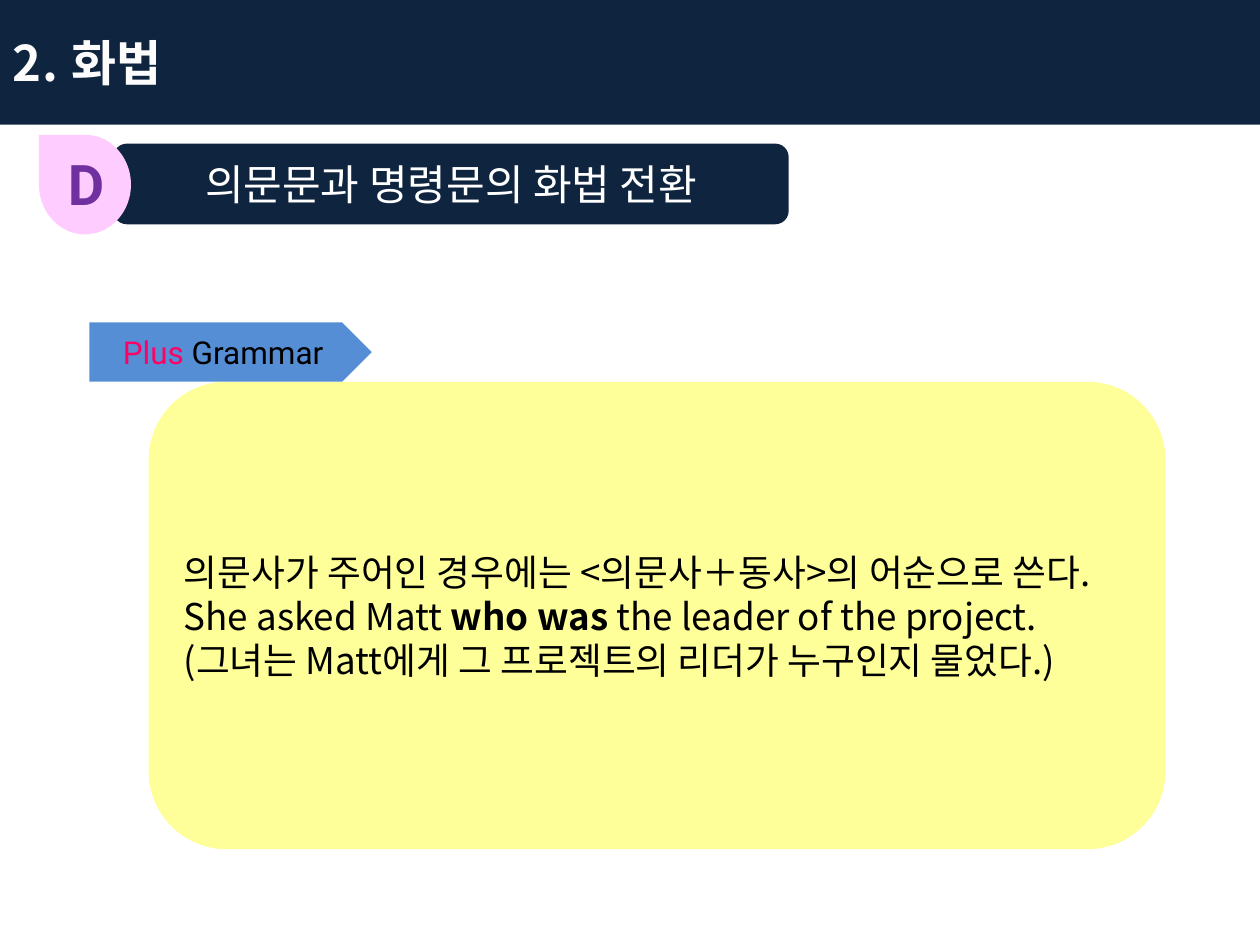
from lxml.etree import SubElement
from pptx import Presentation
from pptx.dml.color import RGBColor
from pptx.enum.shapes import MSO_SHAPE
from pptx.enum.text import MSO_ANCHOR, PP_ALIGN
from pptx.oxml.ns import qn
from pptx.util import Inches, Pt

NAVY = RGBColor(0x0F, 0x24, 0x3E)
PINK = RGBColor(0xFF, 0xCC, 0xFF)
PURPLE = RGBColor(0x70, 0x30, 0xA0)
YELLOW = RGBColor(0xFF, 0xFF, 0x99)
BLUE = RGBColor(0x55, 0x8E, 0xD5)
ROSE = RGBColor(0xFF, 0x00, 0x66)
OFF_WHITE = RGBColor(0xFC, 0xFC, 0xFD)
WHITE = RGBColor(0xFF, 0xFF, 0xFF)
BLACK = RGBColor(0, 0, 0)
KOREAN, LATIN = "Noto Sans CJK KR", "Roboto"

TITLE = [[("2. 화법", OFF_WHITE, True)]]
HEADING = [[("의문문과 명령문의 화법 전환", WHITE, False)]]
LETTER = [[("D", PURPLE, True)]]
LABEL = [[("Plus ", ROSE, False), ("Grammar", BLACK, False)]]
EXPLANATION = [
    [("의문사가 주어인 경우에는 <의문사＋동사>의 어순으로 쓴다.", BLACK, False)],
    [("She asked Matt ", BLACK, False), ("who was ", BLACK, True),
     ("the leader of the project.", BLACK, False)],
    [("(그녀는 Matt에게 그 프로젝트의 리더가 누구인지 물었다.)", BLACK, False)],
]


def write(shape, paragraphs, size, font, align=PP_ALIGN.LEFT, anchor=MSO_ANCHOR.MIDDLE):
    frame = shape.text_frame
    frame.word_wrap = True
    frame.vertical_anchor = anchor
    for index, spans in enumerate(paragraphs):
        para = frame.paragraphs[0] if index == 0 else frame.add_paragraph()
        para.alignment = align
        para.font.size = Pt(size)
        for text, color, bold in spans:
            span = para.add_run()
            span.text = text
            span.font.size = Pt(size)
            span.font.name = font
            span.font.bold = bold
            span.font.color.rgb = color
            SubElement(span.font._element, qn("a:ea"), typeface=font)


def add_block(page, preset, place, color):
    shape = page.shapes.add_shape(preset, *map(Inches, place))
    shape.shadow.inherit = False
    shape.fill.solid()
    shape.fill.fore_color.rgb = color
    shape.line.fill.background()
    return shape


def main():
    deck = Presentation()
    deck.slide_width, deck.slide_height = Inches(10), Inches(7.5)
    page = deck.slides.add_slide(deck.slide_layouts[5])

    title = page.shapes.title
    title.left, title.top = Inches(0), Inches(0)
    title.width, title.height = Inches(10), Inches(0.99)
    title.fill.solid()
    title.fill.fore_color.rgb = NAVY
    write(title, TITLE, 28, KOREAN)
    title.text_frame.paragraphs[0].runs[0].font._element.set("spc", "50")

    heading = add_block(page, MSO_SHAPE.FLOWCHART_ALTERNATE_PROCESS,
                        (0.9, 1.14, 5.36, 0.64), NAVY)
    write(heading, HEADING, 24, KOREAN, PP_ALIGN.CENTER)

    drop = add_block(page, MSO_SHAPE.TEAR, (0.28, 1.1, 0.79, 0.73), PINK)
    drop.rotation = 270
    letter = page.shapes.add_textbox(*map(Inches, (0.44, 1.14, 0.47, 0.64)))
    write(letter, LETTER, 32, LATIN, anchor=MSO_ANCHOR.TOP)

    panel = add_block(page, MSO_SHAPE.FLOWCHART_ALTERNATE_PROCESS,
                      (1.18, 3.03, 8.07, 3.71), YELLOW)
    write(panel, EXPLANATION, 21, KOREAN)
    panel.text_frame.margin_right = 0

    label = add_block(page, MSO_SHAPE.PENTAGON, (0.71, 2.56, 2.24, 0.47), BLUE)
    write(label, LABEL, 18, LATIN, PP_ALIGN.CENTER)

    deck.save("out.pptx")


if __name__ == "__main__":
    main()
